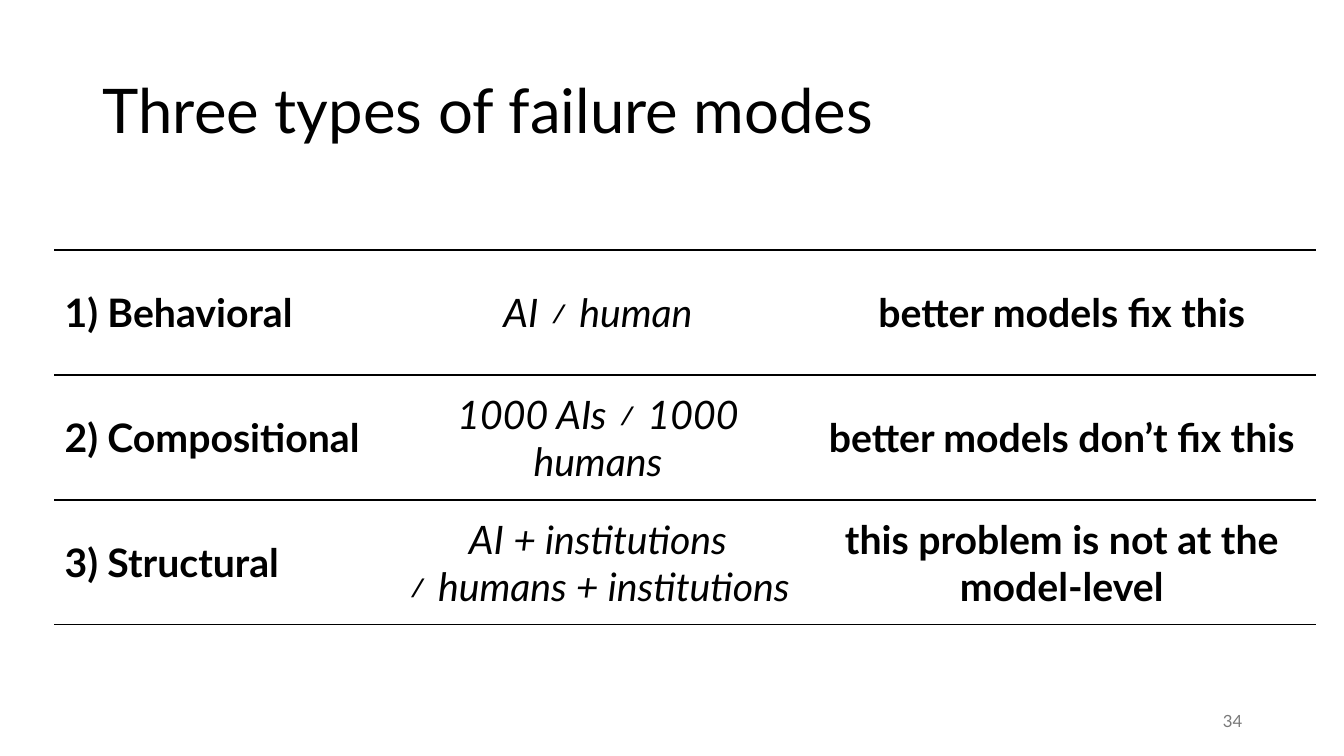
import pptx
import pptx.dml.color
import pptx.enum.text
import pptx.oxml.ns
import pptx.util
import lxml.etree

COLORS = {"background": "FFFFFF", "text": "000000", "rule": "000000", "page_number": "797979"}
FONT = "Lato"
ALIGN = pptx.enum.text.PP_ALIGN
MIDDLE = pptx.enum.text.MSO_ANCHOR.MIDDLE

SLIDE_WIDTH, SLIDE_HEIGHT = 13.33, 7.5
TITLE_BOX = (0.92, 0.4, 11.5, 1.45)
TABLE_BOX = (0.54, 2.48, 12.51, 3.72)
PAGE_NUMBER_BOX = (9.42, 6.95, 3, 0.4)

COLUMN_WIDTHS = (3.31, 4.16, 5.04)
# Alignment, bold and italic of each column
COLUMN_STYLES = (
    (ALIGN.LEFT, True, False),
    (ALIGN.CENTER, False, True),
    (ALIGN.CENTER, True, False),
)
FAILURE_MODES = (
    ("1) Behavioral", "AI ≠ human", "better models fix this"),
    ("2) Compositional", "1000 AIs ≠ 1000 humans", "better models don’t fix this"),
    ("3) Structural", "AI + institutions\v≠ humans + institutions",
     "this problem is not at the model-level"),
)


def style_paragraph(paragraph, size, color, align=ALIGN.LEFT, bold=False, italic=False):
    paragraph.alignment = align
    font = paragraph.font
    font.name = FONT
    font.size = pptx.util.Pt(size)
    font.bold = bold
    font.italic = italic
    font.color.rgb = pptx.dml.color.RGBColor.from_string(COLORS[color])


def add_text(slide, box, text, size, color, align=ALIGN.LEFT, line_spacing=1.0):
    shape = slide.shapes.add_textbox(*map(pptx.util.Inches, box))
    frame = shape.text_frame
    frame.word_wrap = True
    frame.vertical_anchor = MIDDLE
    frame.text = text
    paragraph = frame.paragraphs[0]
    paragraph.line_spacing = line_spacing
    style_paragraph(paragraph, size, color, align)


def rule_cell(cell):
    """Draw rules above and below the cell and leave its sides open."""
    properties = cell._tc.get_or_add_tcPr()
    qn = pptx.oxml.ns.qn
    for index, side in enumerate(("lnL", "lnR", "lnT", "lnB")):
        line = lxml.etree.Element(qn(f"a:{side}"), w=str(pptx.util.Pt(1)))
        if side in ("lnT", "lnB"):
            fill = lxml.etree.SubElement(line, qn("a:solidFill"))
            lxml.etree.SubElement(fill, qn("a:srgbClr"), val=COLORS["rule"])
        else:
            lxml.etree.SubElement(line, qn("a:noFill"))
        properties.insert(index, line)


def add_failure_table(slide, box):
    frame = slide.shapes.add_table(
        len(FAILURE_MODES), len(COLUMN_WIDTHS), *map(pptx.util.Inches, box))
    table = frame.table
    table.first_row = False
    table.horz_banding = False
    for column, width in zip(table.columns, COLUMN_WIDTHS):
        column.width = pptx.util.Inches(width)
    for row, texts in zip(table.rows, FAILURE_MODES):
        row.height = pptx.util.Inches(box[3] / len(FAILURE_MODES))
        for cell, text, (align, bold, italic) in zip(row.cells, texts, COLUMN_STYLES):
            cell.text = text
            cell.vertical_anchor = MIDDLE
            cell.fill.background()
            rule_cell(cell)
            style_paragraph(cell.text_frame.paragraphs[0], 28, "text", align, bold, italic)


def build_failure_modes_slide(presentation):
    slide = presentation.slides.add_slide(presentation.slide_layouts[6])
    background = slide.background.fill
    background.solid()
    background.fore_color.rgb = pptx.dml.color.RGBColor.from_string(COLORS["background"])
    add_text(slide, TITLE_BOX, "Three types of failure modes", 44, "text", line_spacing=0.9)
    add_text(slide, PAGE_NUMBER_BOX, "34", 12, "page_number", ALIGN.RIGHT)
    add_failure_table(slide, TABLE_BOX)


def main():
    presentation = pptx.Presentation()
    presentation.slide_width = pptx.util.Inches(SLIDE_WIDTH)
    presentation.slide_height = pptx.util.Inches(SLIDE_HEIGHT)
    build_failure_modes_slide(presentation)
    presentation.save("out.pptx")


if __name__ == "__main__":
    main()
